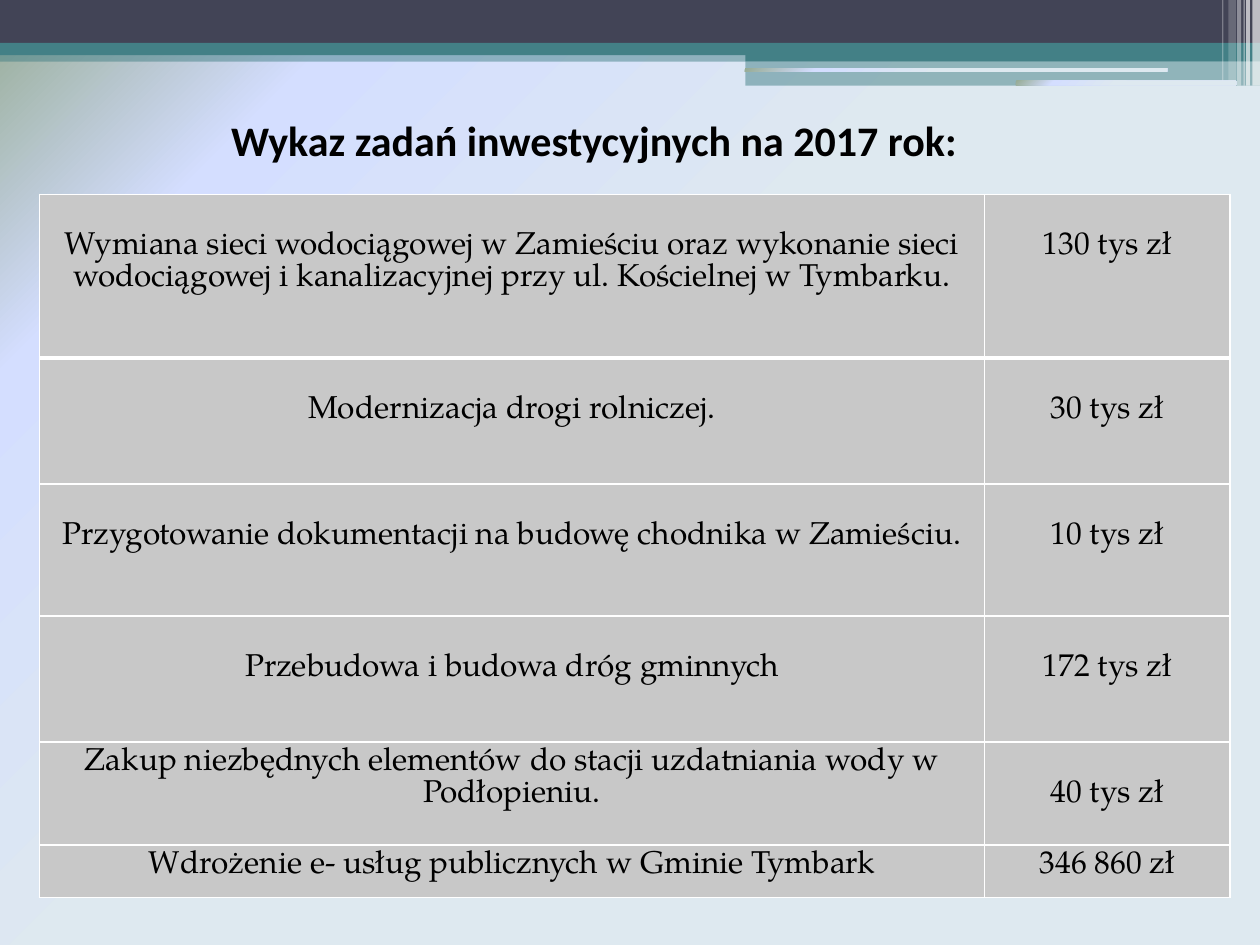
from dataclasses import dataclass
from lxml.etree import SubElement
from pptx import Presentation
from pptx.dml.color import RGBColor
from pptx.enum.shapes import MSO_SHAPE
from pptx.enum.text import MSO_ANCHOR, PP_ALIGN
from pptx.oxml.ns import qn
from pptx.util import Pt


@dataclass(frozen=True)
class Theme:
    dark: str = "424456"
    teal: str = "438086"
    white: str = "FFFFFF"
    ink: str = "000000"
    cell: str = "C8C8C8"
    glow: tuple = ((53, "DEE9F0"), (83, "D4DEFF"), (100, "96AB94"))
    head: str = "Calibri"
    body: str = "TeX Gyre Pagella"
    big: int = 24
    small: int = 18
    pitch: float = 18.3


def write(frame, text, font, size, color, bold=False, pitch=None):
    frame.word_wrap = True
    frame.vertical_anchor = MSO_ANCHOR.TOP
    para = frame.paragraphs[0]
    para.alignment = PP_ALIGN.CENTER
    para.space_before = Pt(0)
    if pitch:
        para.line_spacing = Pt(pitch)
    run = para.add_run()
    run.text = text
    run.font.name = font
    run.font.size = Pt(size)
    run.font.bold = bold
    run.font.color.rgb = RGBColor.from_string(color)


def shade(fill, root, stops):
    fill.gradient()
    grad = next(root.iter(qn("a:gradFill")))
    for child in list(grad):
        grad.remove(child)
    group = SubElement(grad, qn("a:gsLst"))
    for pos, color in stops:
        stop = SubElement(group, qn("a:gs"), pos=str(pos * 1000))
        SubElement(stop, qn("a:srgbClr"), val=color)
    way = SubElement(grad, qn("a:path"), path="circle")
    SubElement(way, qn("a:fillToRect"), l="100000", t="100000")


def edge(cell, side, color, width):
    props = cell._tc.get_or_add_tcPr()
    line = SubElement(props, qn("a:" + side), w=str(Pt(width)))
    solid = SubElement(line, qn("a:solidFill"))
    SubElement(solid, qn("a:srgbClr"), val=color)


class Board:
    def __init__(self, slide, theme):
        self.slide = slide
        self.theme = theme

    def ground(self):
        shade(self.slide.background.fill, self.slide.element, self.theme.glow)

    def shape(self, kind, box):
        item = self.slide.shapes.add_shape(kind, *map(Pt, box))
        item.shadow.inherit = False
        item.line.fill.background()
        return item

    def bar(self, box, color, alpha=100):
        item = self.shape(MSO_SHAPE.RECTANGLE, box)
        item.fill.solid()
        item.fill.fore_color.rgb = RGBColor.from_string(color)
        if alpha < 100:
            tint = next(item.element.spPr.iter(qn("a:srgbClr")))
            SubElement(tint, qn("a:alpha"), val=str(alpha * 1000))

    def pill(self, box):
        item = self.shape(MSO_SHAPE.ROUNDED_RECTANGLE, box)
        shade(item.fill, item.element, self.theme.glow)

    def title(self, text, box):
        item = self.slide.shapes.title
        item.left, item.top, item.width, item.height = map(Pt, box)
        look = self.theme
        write(item.text_frame, text, look.head, look.big, look.ink, bold=True)

    def table(self, data, left, top, cols, rows):
        look = self.theme
        grid = self.slide.shapes.add_table(
            len(rows), len(cols), Pt(left), Pt(top), Pt(sum(cols)), Pt(sum(rows))
        ).table
        grid.first_row = grid.horz_banding = False
        for col, width in zip(grid.columns, cols):
            col.width = Pt(width)
        for row, high in zip(grid.rows, rows):
            row.height = Pt(high)
        for i, line in enumerate(data):
            for j, (text, skip) in enumerate(line):
                cell = grid.cell(i, j)
                cell.margin_top = Pt(3 + skip * look.pitch)
                cell.margin_bottom = Pt(0)
                write(cell.text_frame, text, look.body, look.small, look.ink, pitch=look.pitch)
                for side in ("lnL", "lnR", "lnT", "lnB"):
                    thick = (i, side) in ((0, "lnB"), (1, "lnT"))
                    edge(cell, side, look.white, 3 if thick else 1)
                cell.fill.solid()
                cell.fill.fore_color.rgb = RGBColor.from_string(look.cell)


def main():
    deck = Presentation()
    deck.slide_width, deck.slide_height = Pt(720), Pt(540)
    theme = Theme()
    board = Board(deck.slides.add_slide(deck.slide_layouts[5]), theme)
    board.ground()

    board.bar((0, 28.8, 720, 6.5), theme.teal, 50)
    board.bar((0, 0, 720, 24.5), theme.dark)
    board.bar((0, 24.5, 720, 7), theme.teal)
    board.bar((426, 28, 294, 7), theme.teal)
    board.bar((426, 35, 294, 14), theme.teal, 50)
    board.pill((425.5, 38.9, 241.5, 2.2))
    board.pill((580.5, 46, 126, 2.8))
    stripes = (
        (715.7, 4.3, 49, 65),
        (712.1, 2.2, 49, 65),
        (710.6, 0.7, 49, 60),
        (707, 2.2, 49, 40),
        (702, 4.3, 46, 20),
        (698.4, 0.7, 46, 30),
    )
    for left, width, high, alpha in stripes:
        board.bar((left, 0, width, high), theme.white, alpha)

    board.title("Wykaz zadań inwestycyjnych na 2017 rok:", (44.6, 62, 589.7, 36))
    data = (
        (("Wymiana sieci wodociągowej w Zamieściu oraz wykonanie sieci "
          "wodociągowej i kanalizacyjnej przy ul. Kościelnej w Tymbarku.", 1),
         ("130 tys zł", 1)),
        (("Modernizacja drogi rolniczej.", 1), ("30 tys zł", 1)),
        (("Przygotowanie dokumentacji na budowę chodnika w Zamieściu.", 1),
         ("10 tys zł", 1)),
        (("Przebudowa i budowa dróg gminnych", 1), ("172 tys zł", 1)),
        (("Zakup niezbędnych elementów do stacji uzdatniania wody w Podłopieniu.", 0),
         ("40 tys zł", 1)),
        (("Wdrożenie e- usług publicznych w Gminie Tymbark", 0), ("346 860 zł", 0)),
    )
    board.table(data, 22.5, 111, (540, 140.5), (93.5, 72, 75.5, 72, 59, 30))
    deck.save("out.pptx")


if __name__ == "__main__":
    main()
